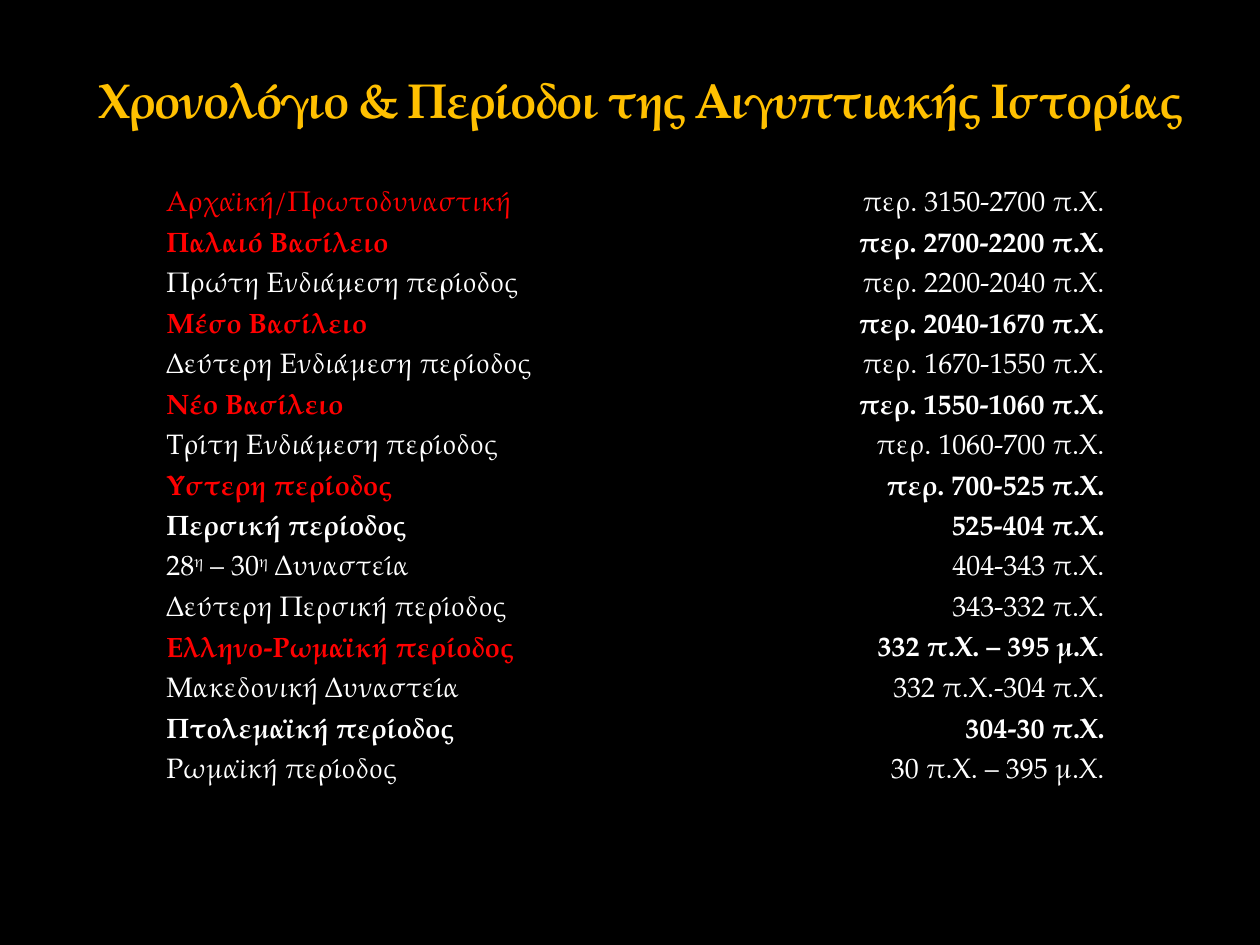
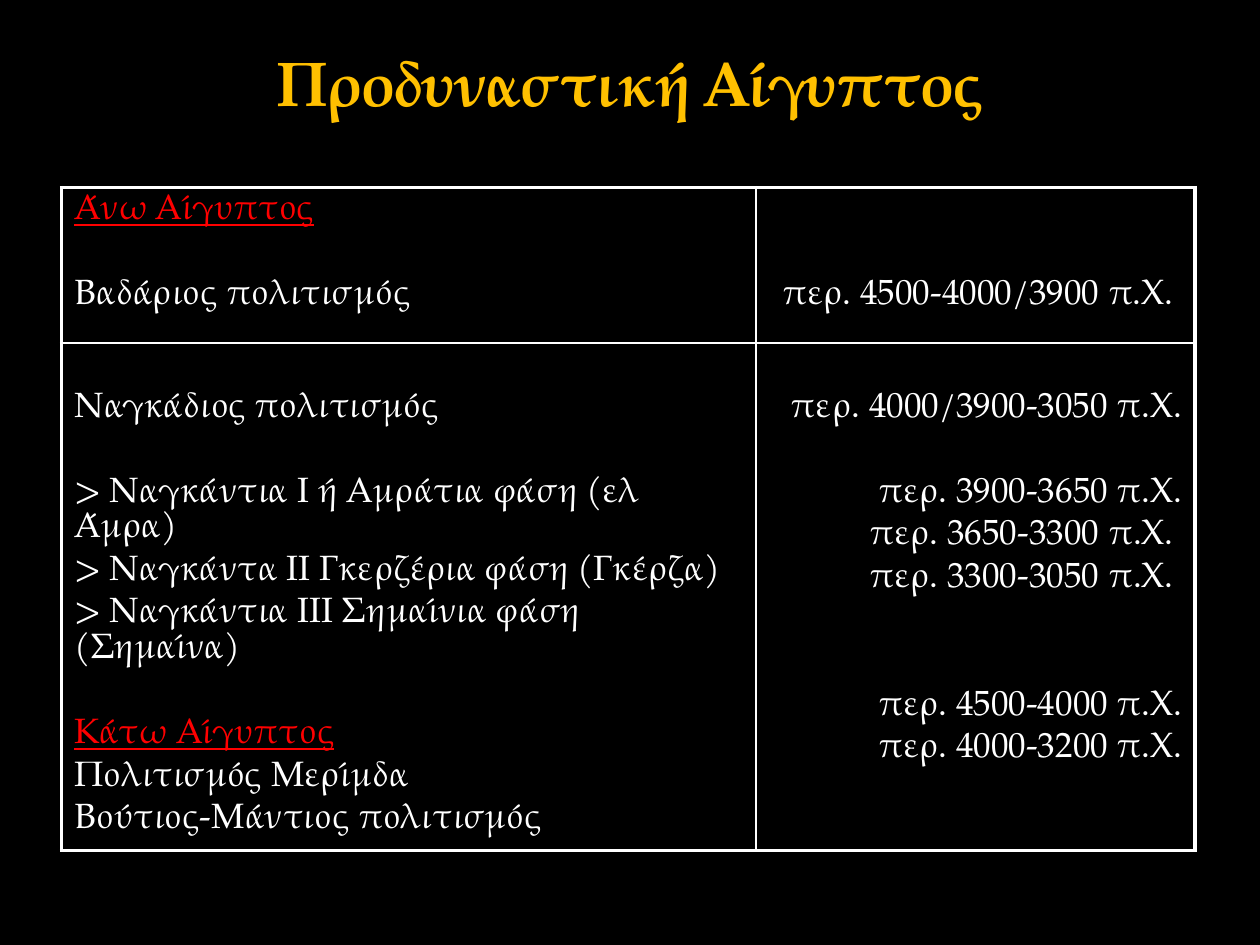
from dataclasses import dataclass

from lxml import etree
from pptx import Presentation
from pptx import util as u
from pptx.dml.color import RGBColor
from pptx.enum import text
from pptx.oxml.ns import qn

FONT = "TeX Gyre Pagella"
BLACK, WHITE, RED, GOLD, OUTLINE = "000000", "FFFFFF", "FF0000", "FFC000", "3C4422"
LEFT, RIGHT, CENTER = text.PP_ALIGN.LEFT, text.PP_ALIGN.RIGHT, text.PP_ALIGN.CENTER
HANGING = u.Cm(0.97)
INSET = 0.13            # cm above the text of a cell
PERIOD_HEIGHT = 15.9    # points, height of a period's line
CULTURE_HEIGHT = 20.3   # points, height of a culture's line
CULTURE_SPACE = 4       # points before each culture line
CULTURE_PITCH = CULTURE_HEIGHT + CULTURE_SPACE


@dataclass(frozen=True)
class Span:
    words: str
    size: float
    color: str = WHITE
    bold: bool = False
    underline: bool = False
    raised: bool = False


@dataclass(frozen=True)
class Period:
    name: str
    dates: str
    bold: bool = False
    color: str = WHITE


@dataclass(frozen=True)
class Line:
    words: str
    skipped: int = 0    # line heights left free above
    heading: bool = False


PERIODS = [
    Period("Αρχαϊκή/Πρωτοδυναστική", "περ. 3150-2700 π.Χ.", color=RED),
    Period("Παλαιό Βασίλειο", "περ. 2700-2200 π.Χ.", True, RED),
    Period("Πρώτη Ενδιάμεση περίοδος", "περ. 2200-2040 π.Χ."),
    Period("Μέσο Βασίλειο", "περ. 2040-1670 π.Χ.", True, RED),
    Period("Δεύτερη Ενδιάμεση περίοδος", "περ. 1670-1550 π.Χ."),
    Period("Νέο Βασίλειο", "περ. 1550-1060 π.Χ.", True, RED),
    Period("Τρίτη Ενδιάμεση περίοδος", "περ. 1060-700 π.Χ."),
    Period("Ύστερη περίοδος", "περ. 700-525 π.Χ.", True, RED),
    Period("Περσική περίοδος", "525-404 π.Χ.", True),
    Period("28^η^ – 30^η^ Δυναστεία", "404-343 π.Χ."),
    Period("Δεύτερη Περσική περίοδος", "343-332 π.Χ."),
    Period("Ελληνο-Ρωμαϊκή περίοδος", "332 π.Χ. – 395 μ.Χ.", True, RED),
    Period("Μακεδονική Δυναστεία", "332 π.Χ.-304 π.Χ."),
    Period("Πτολεμαϊκή περίοδος", "304-30 π.Χ.", True),
    Period("Ρωμαϊκή περίοδος", "30 π.Χ. – 395 μ.Χ."),
]

CULTURES = [
    (
        [Line("Άνω Αίγυπτος", heading=True), Line("Βαδάριος πολιτισμός", 1)],
        [Line("περ. 4500-4000/3900 π.Χ. ", 2)],
    ),
    (
        [
            Line("Ναγκάδιος πολιτισμός", 1),
            Line("> Ναγκάντια Ι ή Αμράτια φάση (ελ Άμρα)", 1),
            Line("> Ναγκάντα ΙΙ Γκερζέρια φάση (Γκέρζα)"),
            Line("> Ναγκάντια ΙΙΙ Σημαίνια φάση (Σημαίνα)"),
            Line("Κάτω Αίγυπτος", 1, heading=True),
            Line("Πολιτισμός Μερίμδα"),
            Line("Βούτιος-Μάντιος πολιτισμός"),
        ],
        [
            Line("περ. 4000/3900-3050 π.Χ.", 1),
            Line("περ. 3900-3650 π.Χ.", 1),
            Line("περ. 3650-3300 π.Χ. "),
            Line("περ. 3300-3050 π.Χ. "),
            Line("περ. 4500-4000 π.Χ.", 2),
            Line("περ. 4000-3200 π.Χ."),
        ],
    ),
]


def rgb(color: str) -> RGBColor:
    return RGBColor.from_string(color)


def add_span(para, span: Span):
    run = para.add_run()
    run.text = span.words
    font = run.font
    font.name, font.size, font.bold = FONT, u.Pt(span.size), span.bold
    font.color.rgb = rgb(span.color)
    if span.underline:
        font.underline = True
    if span.raised:
        font._element.set("baseline", "30000")
    return run


def line_element(tag: str, color: str, points: float):
    line = etree.Element(qn(tag), w=str(u.Pt(points)))
    fill = etree.SubElement(line, qn("a:solidFill"))
    etree.SubElement(fill, qn("a:srgbClr"), val=color)
    return line


def add_title(page, words: str, size: float, left: float, top: float, height: float) -> None:
    box = page.shapes.add_textbox(u.Cm(left), u.Cm(top), u.Cm(22.86), u.Cm(height))
    frame = box.text_frame
    frame.word_wrap = True
    frame.vertical_anchor = text.MSO_ANCHOR.BOTTOM
    para = frame.paragraphs[0]
    para.alignment = CENTER
    properties = add_span(para, Span(words, size, GOLD, bold=True)).font._element
    properties.set("spc", "-100")
    outline = line_element("a:ln", OUTLINE, 0.25)
    etree.SubElement(outline.find(".//" + qn("a:srgbClr")), qn("a:alpha"), val="25000")
    properties.insert(0, outline)


def add_grid(page, left: float, top: float, widths: list[float], heights: list[float],
             color: str, outer: float, inner: float):
    """Add a black table whose frame and inner rules have their own widths."""
    rows, columns = len(heights), len(widths)
    table = page.shapes.add_table(rows, columns, u.Cm(left), u.Cm(top),
                                  u.Cm(sum(widths)), u.Cm(sum(heights))).table
    table.first_row = table.horz_banding = False
    for column, width in zip(table.columns, widths):
        column.width = u.Cm(width)
    for row, height in zip(table.rows, heights):
        row.height = u.Cm(height)
    for r in range(rows):
        for c in range(columns):
            cell = table.cell(r, c)
            cell.fill.solid()
            cell.fill.fore_color.rgb = rgb(BLACK)
            on_frame = {"a:lnL": c == 0, "a:lnR": c == columns - 1,
                        "a:lnT": r == 0, "a:lnB": r == rows - 1}
            for place, (tag, is_outer) in enumerate(on_frame.items()):
                edge = line_element(tag, color, outer if is_outer else inner)
                cell._tc.get_or_add_tcPr().insert(place, edge)
    return table


def fill_period_cell(cell, spans: list[Span], alignment) -> None:
    para = cell.text_frame.paragraphs[0]
    para.alignment = alignment
    para.line_spacing = u.Pt(PERIOD_HEIGHT)
    properties = para._p.get_or_add_pPr()
    properties.set("marL", str(HANGING))
    properties.set("indent", str(-HANGING))
    for span in spans:
        add_span(para, span)


def fill_culture_cell(cell, lines: list[Line], alignment) -> None:
    cell.margin_top = u.Cm(INSET) + u.Pt(CULTURE_PITCH * lines[0].skipped)
    frame = cell.text_frame
    for number, line in enumerate(lines):
        para = frame.add_paragraph() if number else frame.paragraphs[0]
        para.alignment = alignment
        para.line_spacing = u.Pt(CULTURE_HEIGHT)
        if number:
            para.space_before = u.Pt(CULTURE_SPACE + CULTURE_PITCH * line.skipped)
        add_span(para, Span(line.words, 20, RED if line.heading else WHITE,
                            underline=line.heading))


def add_page(deck):
    page = deck.slides.add_slide(deck.slide_layouts[6])
    page.background.fill.solid()
    page.background.fill.fore_color.rgb = rgb(BLACK)
    return page


def add_timeline_page(deck) -> None:
    page = add_page(deck)
    add_title(page, "Χρονολόγιο & Περίοδοι της Αιγυπτιακής Ιστορίας", 28, 1.5, 0.71, 2.01)
    table = add_grid(page, 3.1, 3.73, [9.71, 9.71], [0.81] * len(PERIODS), BLACK, 1, 1)
    for row, period in enumerate(PERIODS):
        # Carets enclose the raised ordinal endings.
        name = [Span(words, 16, period.color, period.bold, raised=part % 2 == 1)
                for part, words in enumerate(period.name.split("^"))]
        dates = [Span(period.dates, 16, bold=period.bold)]
        if period.dates.endswith("μ.Χ.") and period.bold:
            dates = [Span(period.dates[:-1], 16, bold=True), Span(".", 16)]
        fill_period_cell(table.cell(row, 0), name, LEFT)
        fill_period_cell(table.cell(row, 1), dates, RIGHT)


def add_predynastic_page(deck) -> None:
    page = add_page(deck)
    add_title(page, "Προδυναστική Αίγυπτος", 36, 1.27, 1.17, 1.35)
    table = add_grid(page, 1.24, 3.78, [14, 8.85], [3.13, 10.24], WHITE, 2.25, 1)
    for row, (names, dates) in enumerate(CULTURES):
        fill_culture_cell(table.cell(row, 0), names, LEFT)
        fill_culture_cell(table.cell(row, 1), dates, RIGHT)


def main() -> None:
    deck = Presentation()
    deck.slide_width, deck.slide_height = u.Cm(25.4), u.Cm(19.05)
    add_timeline_page(deck)
    add_predynastic_page(deck)
    deck.save("out.pptx")


if __name__ == "__main__":
    main()
